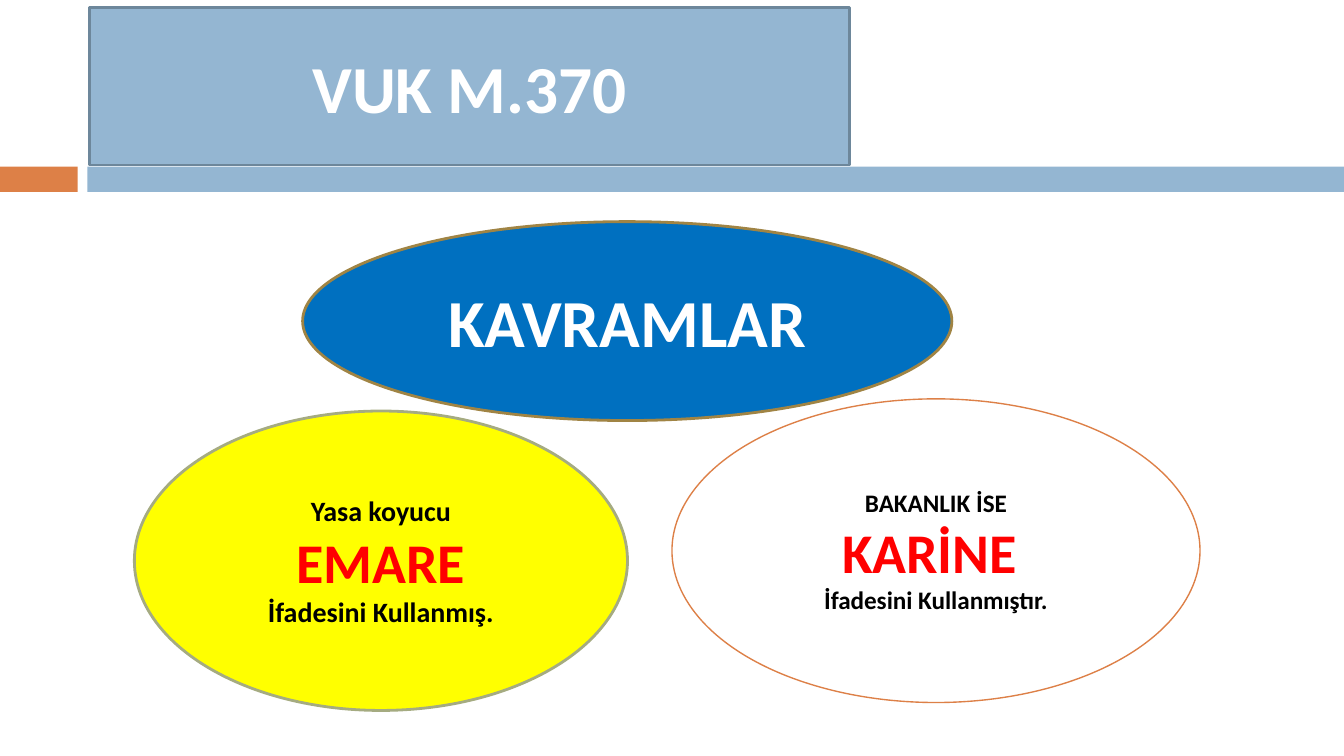
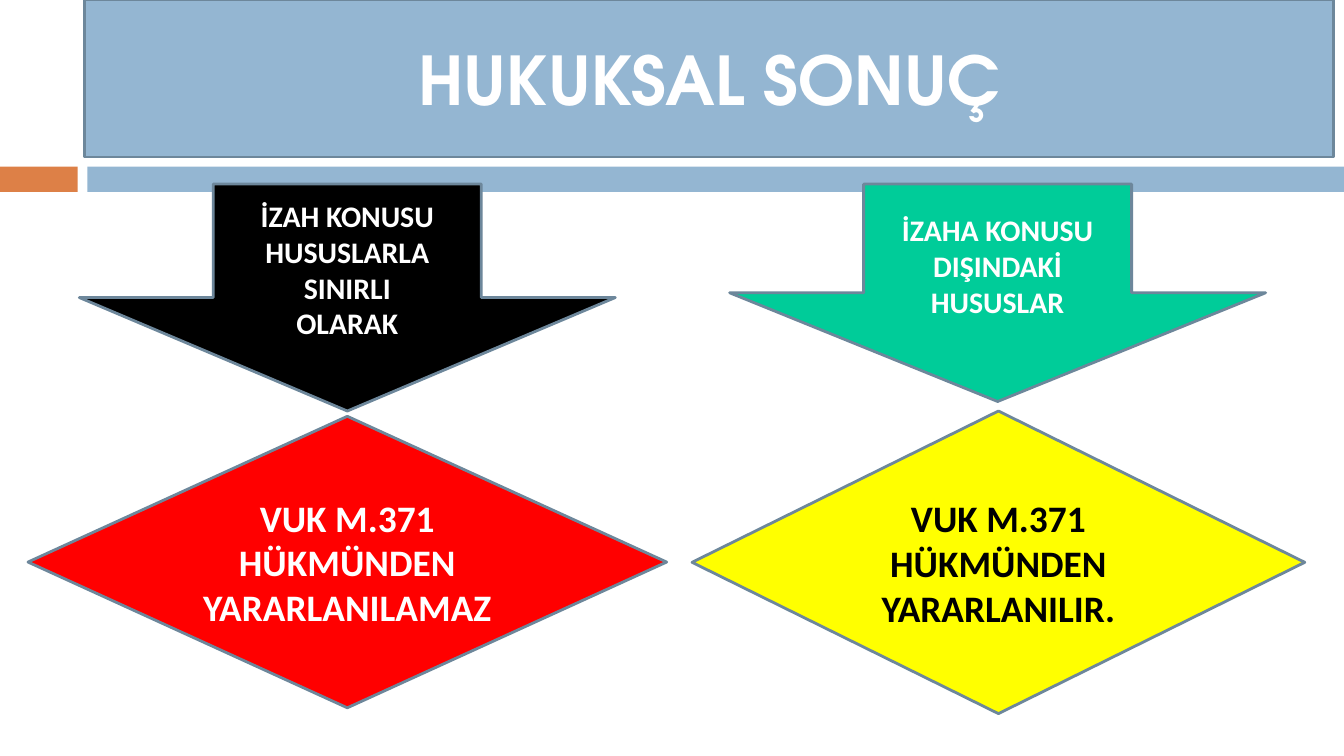
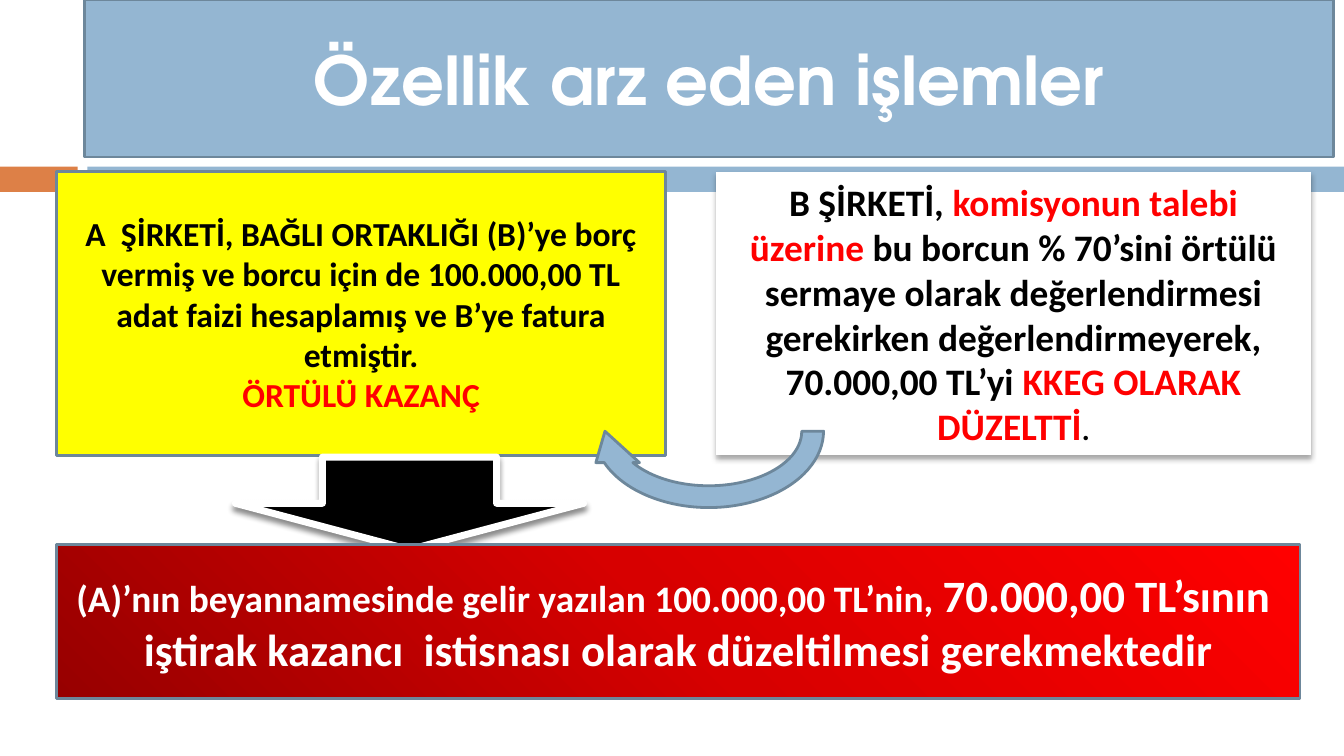
from dataclasses import dataclass, field

from lxml.etree import SubElement
from pptx import Presentation
from pptx.dml.color import RGBColor
from pptx.enum.shapes import MSO_SHAPE
from pptx.enum.text import MSO_ANCHOR, PP_ALIGN
from pptx.oxml import parse_xml
from pptx.oxml.ns import nsdecls, qn
from pptx.util import Cm, Pt

BLUE = RGBColor(0x94, 0xB6, 0xD2)
BLUE_EDGE = RGBColor(0x6D, 0x87, 0x9B)
ORANGE = RGBColor(0xDD, 0x80, 0x47)
DEEP_BLUE = RGBColor(0x00, 0x70, 0xC0)
GOLD_EDGE = RGBColor(0xA0, 0x84, 0x44)
OLIVE_EDGE = RGBColor(0xA5, 0xAB, 0x81)
GREEN = RGBColor(0x00, 0xCC, 0x99)
YELLOW = RGBColor(0xFF, 0xFF, 0x00)
RED = RGBColor(0xFF, 0x00, 0x00)
MID_RED = RGBColor(0xD7, 0x00, 0x00)
DARK_RED = RGBColor(0x97, 0x00, 0x00)
BLACK = RGBColor(0x00, 0x00, 0x00)
WHITE = RGBColor(0xFF, 0xFF, 0xFF)

BODY_FONT = "Calibri"
TITLE_FONT = "TeX Gyre Adventor"
RED_GRADIENT = [(0, DARK_RED), (50, MID_RED), (100, RED)]

SLIDE_W, SLIDE_H = 25.4, 14.29
BAND_TOP, BAND_H = 3.15, 0.48
ACCENT_W, BAND_LEFT = 1.47, 1.65
WIDE_TITLE = (1.6, 0, 23.6, 2.97)
ARROW_W, ARROW_TOP = 10.13, 3.48
BOX_TOP, BOX_H = 3.25, 5.36


@dataclass
class Part:
    kind: MSO_SHAPE
    box: tuple
    fill: object = None
    line: RGBColor = BLUE_EDGE
    width: float = 1.5
    text: list = field(default_factory=list)
    font: str = BODY_FONT
    shadow: tuple = None
    rotation: int = 0


def title(text, box=WIDE_TITLE, font=TITLE_FONT):
    return Part(MSO_SHAPE.RECTANGLE, box, BLUE, text=[[(text, 36, WHITE)]], font=font)


def term(lead, word, tail, size):
    return [[(lead, size, BLACK)], [(word, 30, RED)], [(tail, size, BLACK)]]


def arrow(left, height, fill, lines):
    return Part(MSO_SHAPE.DOWN_ARROW, (left, ARROW_TOP, ARROW_W, height), fill,
                text=[[(line, 16, WHITE)] for line in lines])


def decision(box, fill, text, color):
    return Part(MSO_SHAPE.FLOWCHART_DECISION, box, fill, text=[[(text, 20, color)]])


SLIDES = [
    [
        title("VUK M.370", (1.7, 0.15, 14.35, 2.97), BODY_FONT),
        Part(MSO_SHAPE.OVAL, (5.72, 4.19, 12.27, 3.76), DEEP_BLUE, GOLD_EDGE,
             text=[[("KAVRAMLAR", 36, WHITE)]]),
        Part(MSO_SHAPE.OVAL, (2.54, 7.77, 9.32, 5.66), YELLOW, OLIVE_EDGE,
             text=term("Yasa koyucu", "EMARE", "İfadesini Kullanmış.", 15)),
        Part(MSO_SHAPE.OVAL, (12.7, 7.54, 9.98, 5.74), None, ORANGE, 0.75,
             text=term("BAKANLIK İSE", "KARİNE ", "İfadesini Kullanmıştır.", 13.5)),
    ],
    [
        title("HUKUKSAL SONUÇ"),
        arrow(1.5, 4.29, BLACK, ["İZAH KONUSU HUSUSLARLA SINIRLI", "OLARAK"]),
        decision((0.53, 7.87, 12.07, 5.51), RED,
                 "VUK M.371 HÜKMÜNDEN YARARLANILAMAZ", WHITE),
        decision((13.08, 7.77, 11.58, 5.72), YELLOW,
                 "VUK M.371 HÜKMÜNDEN YARARLANILIR.", BLACK),
        arrow(13.79, 4.11, GREEN, ["İZAHA KONUSU", "DIŞINDAKİ HUSUSLAR"]),
    ],
    [
        title("Özellik arz eden işlemler"),
        Part(MSO_SHAPE.FLOWCHART_PROCESS, (1.07, BOX_TOP, 11.51, BOX_H), YELLOW, text=[
            [("A  ŞİRKETİ, BAĞLI ORTAKLIĞI (B)’ye borç vermiş ve borcu için de "
              "100.000,00 TL adat faizi hesaplamış ve B’ye fatura etmiştir.", 18, BLACK)],
            [("ÖRTÜLÜ KAZANÇ", 18, RED)],
        ]),
        Part(MSO_SHAPE.FLOWCHART_PROCESS, (13.54, BOX_TOP, 11.23, BOX_H), WHITE, None, text=[[
            ("B ŞİRKETİ, ", 20, BLACK),
            ("komisyonun talebi üzerine ", 20, RED),
            ("bu borcun % 70’sini örtülü sermaye olarak değerlendirmesi gerekirken "
             "değerlendirmeyerek, 70.000,00 TL’yi ", 20, BLACK),
            ("KKEG OLARAK DÜZELTTİ", 20, RED),
            (".", 16, BLACK),
        ]], shadow=(35, 3, 2)),
        Part(MSO_SHAPE.CIRCULAR_ARROW, (11.02, 6.5, 4.75, 3.3), BLUE, rotation=180),
        Part(MSO_SHAPE.DOWN_ARROW, (4.45, 8.64, 6.58, 1.75), BLACK, WHITE, 3.75,
             shadow=(45, 3, 2.4)),
        Part(MSO_SHAPE.RECTANGLE, (1.07, 10.29, 23.5, 2.92), RED_GRADIENT, text=[[
            ("(A)’nın beyannamesinde gelir yazılan 100.000,00 TL’nin, ", 20, WHITE),
            ("70.000,00 TL’sının  iştirak kazancı  istisnası olarak düzeltilmesi "
             "gerekmektedir", 24, WHITE),
        ]]),
    ],
]

BANDS = [
    Part(MSO_SHAPE.RECTANGLE, (0, BAND_TOP, ACCENT_W, BAND_H), ORANGE, None),
    Part(MSO_SHAPE.RECTANGLE, (BAND_LEFT, BAND_TOP, SLIDE_W - BAND_LEFT, BAND_H), BLUE, None),
]


def set_fill(sp, fill):
    sp.fill.background()
    if isinstance(fill, RGBColor):
        sp.fill.solid()
        sp.fill.fore_color.rgb = fill
    elif fill:
        stops = "".join(f'<a:gs pos="{pos * 1000}"><a:srgbClr val="{color}"/></a:gs>'
                        for pos, color in fill)
        grad = parse_xml(
            f'<a:gradFill {nsdecls("a")} rotWithShape="1"><a:gsLst>{stops}</a:gsLst>'
            '<a:path path="circle"><a:fillToRect t="100000" r="100000"/></a:path>'
            '</a:gradFill>')
        spPr = sp._element.spPr
        spPr.replace(spPr.find(qn("a:noFill")), grad)


def set_shadow(sp, shadow):
    sp.shadow.inherit = False
    if shadow:
        alpha, blur, dist = shadow
        effects = sp._element.spPr.find(qn("a:effectLst"))
        outer = SubElement(effects, qn("a:outerShdw"), blurRad=str(Pt(blur)),
                           dist=str(Pt(dist)), dir="5400000", rotWithShape="0")
        color = SubElement(outer, qn("a:srgbClr"), val=str(BLACK))
        SubElement(color, qn("a:alpha"), val=str(alpha * 1000))


def set_text(sp, paragraphs, font):
    tf = sp.text_frame
    tf.word_wrap = True
    tf.vertical_anchor = MSO_ANCHOR.MIDDLE
    for i, runs in enumerate(paragraphs):
        p = tf.add_paragraph() if i else tf.paragraphs[0]
        p.alignment = PP_ALIGN.CENTER
        for text, size, color in runs:
            r = p.add_run()
            r.text = text
            r.font.name = font
            r.font.size = Pt(size)
            r.font.bold = True
            r.font.color.rgb = color


def add_part(slide, part):
    sp = slide.shapes.add_shape(part.kind, *[Cm(v) for v in part.box])
    sp.rotation = part.rotation
    set_fill(sp, part.fill)
    if part.line is None:
        sp.line.fill.background()
    else:
        sp.line.color.rgb = part.line
        sp.line.width = Pt(part.width)
    set_shadow(sp, part.shadow)
    if part.text:
        set_text(sp, part.text, part.font)


def main():
    prs = Presentation()
    prs.slide_width, prs.slide_height = Cm(SLIDE_W), Cm(SLIDE_H)
    for parts in SLIDES:
        slide = prs.slides.add_slide(prs.slide_layouts[6])
        for part in BANDS + parts:
            add_part(slide, part)
    prs.save("out.pptx")


if __name__ == "__main__":
    main()
